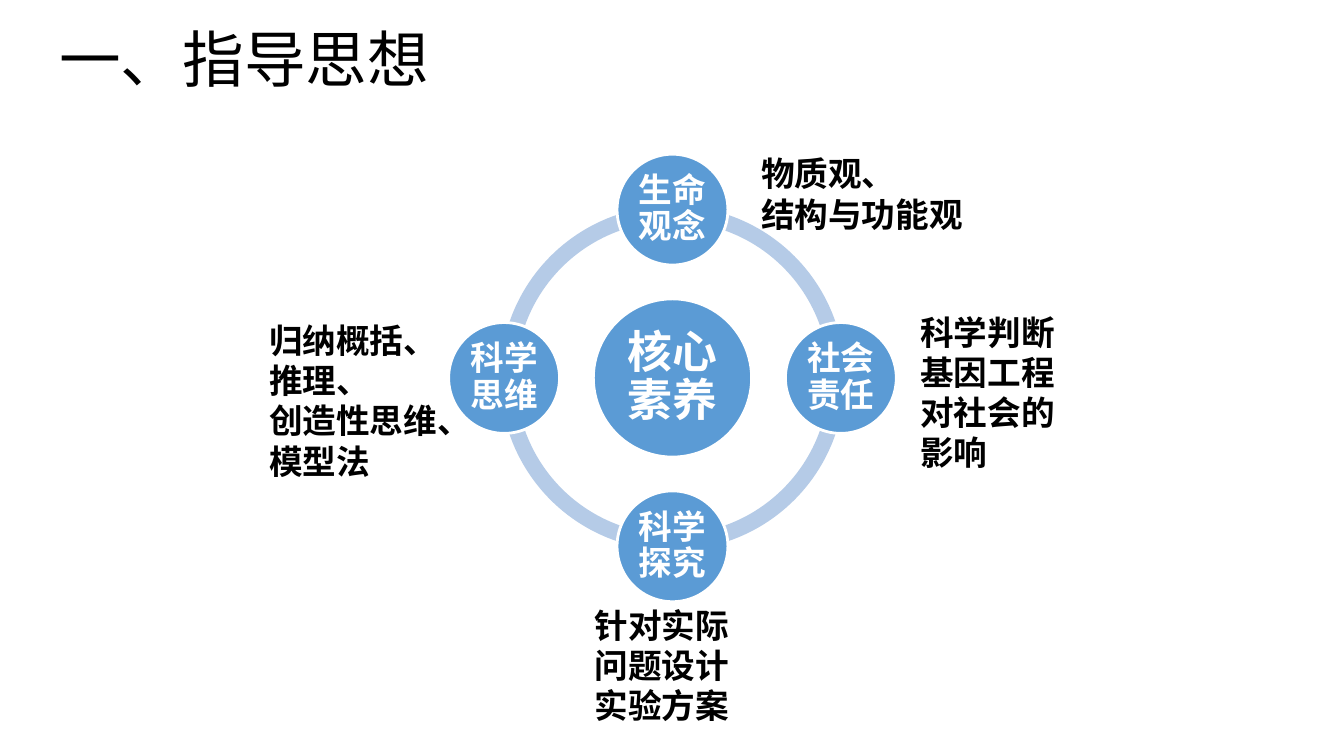
from dataclasses import dataclass

from pptx import Presentation
from pptx import util as u
from pptx.dml.color import RGBColor
from pptx.enum import shapes, text

TITLE = "一、指导思想"
CENTRE = "核心素养"
PETALS = [
    ("生命观念", 0, -1),
    ("社会责任", 1, 0),
    ("科学探究", 0, 1),
    ("科学思维", -1, 0),
]
NOTES = [
    (["物质观、", "结构与功能观"], (7.45, 1.47, 2.68, 0.91)),
    (["归纳概括、推理、", "创造性思维、", "模型法"], (2.57, 3.12, 1.97, 1.72)),
    (["针对实际问题设计实验方案"], (5.8, 5.95, 1.65, 1.31)),
    (["科学判断基因工程对社会的影响"], (9.03, 3.04, 1.65, 1.72)),
]
ARC_ANGLES = [(108, 162), (54, 108), (0, 54), (162, 0)]
ARC_THICKNESS = 0.046

CENTRE_X, CENTRE_Y = 6.67, 3.75
ORBIT = 1.67
RING_SIZE, CORE_SIZE, PETAL_SIZE = 3.42, 1.57, 1.1


@dataclass
class Theme:
    disc = RGBColor(0x5B, 0x9B, 0xD5)
    ring = RGBColor(0xB5, 0xCB, 0xE7)
    light = RGBColor(0xFF, 0xFF, 0xFF)
    dark = RGBColor(0, 0, 0)
    title_font = "Noto Sans CJK SC"
    body_font = "Arial"
    title_size = 44
    core_size = 32
    body_size = 24


theme = Theme()


def style(para, size, color, name=theme.body_font, bold=True):
    para.font.size = u.Pt(size)
    para.font.color.rgb = color
    para.font.name = name
    para.font.bold = bold


def add_round(page, kind, x, y, size, color):
    shape = page.shapes.add_shape(
        kind, *map(u.Inches, (x - size / 2, y - size / 2, size, size)))
    shape.shadow.inherit = False
    shape.fill.solid()
    shape.fill.fore_color.rgb = color
    return shape


def add_disc(page, label, x, y, size, type_size, inset):
    disc = add_round(page, shapes.MSO_SHAPE.OVAL, x, y, size, theme.disc)
    disc.line.color.rgb = theme.light
    disc.line.width = u.Pt(2)
    frame = disc.text_frame
    frame.word_wrap = True
    frame.vertical_anchor = text.MSO_ANCHOR.MIDDLE
    frame.margin_left = frame.margin_right = u.Inches(inset)
    frame.margin_top = frame.margin_bottom = u.Inches(inset)
    para = frame.paragraphs[0]
    para.text = label
    para.alignment = text.PP_ALIGN.CENTER
    para.line_spacing = 0.9
    style(para, type_size, theme.light)


def add_title(page):
    box = page.shapes.add_textbox(*map(u.Inches, (0.49, 0, 9, 1.25)))
    frame = box.text_frame
    frame.word_wrap = True
    frame.vertical_anchor = text.MSO_ANCHOR.MIDDLE
    para = frame.paragraphs[0]
    para.text = TITLE
    para.line_spacing = 0.9
    style(para, theme.title_size, theme.dark, theme.title_font, False)


def add_note(page, lines, place):
    frame = page.shapes.add_textbox(*map(u.Inches, place)).text_frame
    frame.word_wrap = True
    frame.auto_size = text.MSO_AUTO_SIZE.SHAPE_TO_FIT_TEXT
    frame.text = "\n".join(lines)
    for para in frame.paragraphs:
        style(para, theme.body_size, theme.dark)


def main():
    deck = Presentation()
    deck.slide_width, deck.slide_height = u.Inches(13.33), u.Inches(7.5)
    page = deck.slides.add_slide(deck.slide_layouts[6])
    add_title(page)
    for start, end in ARC_ANGLES:
        arc = add_round(page, shapes.MSO_SHAPE.BLOCK_ARC,
                        CENTRE_X, CENTRE_Y, RING_SIZE, theme.ring)
        arc.line.fill.background()
        for index, value in enumerate((start, end, ARC_THICKNESS)):
            arc.adjustments[index] = value
    add_disc(page, CENTRE, CENTRE_X, CENTRE_Y, CORE_SIZE, theme.core_size, 0.04)
    for label, across, down in PETALS:
        add_disc(page, label, CENTRE_X + across * ORBIT, CENTRE_Y + down * ORBIT,
                 PETAL_SIZE, theme.body_size, 0.03)
    for lines, place in NOTES:
        add_note(page, lines, place)
    deck.save("out.pptx")


if __name__ == "__main__":
    main()
